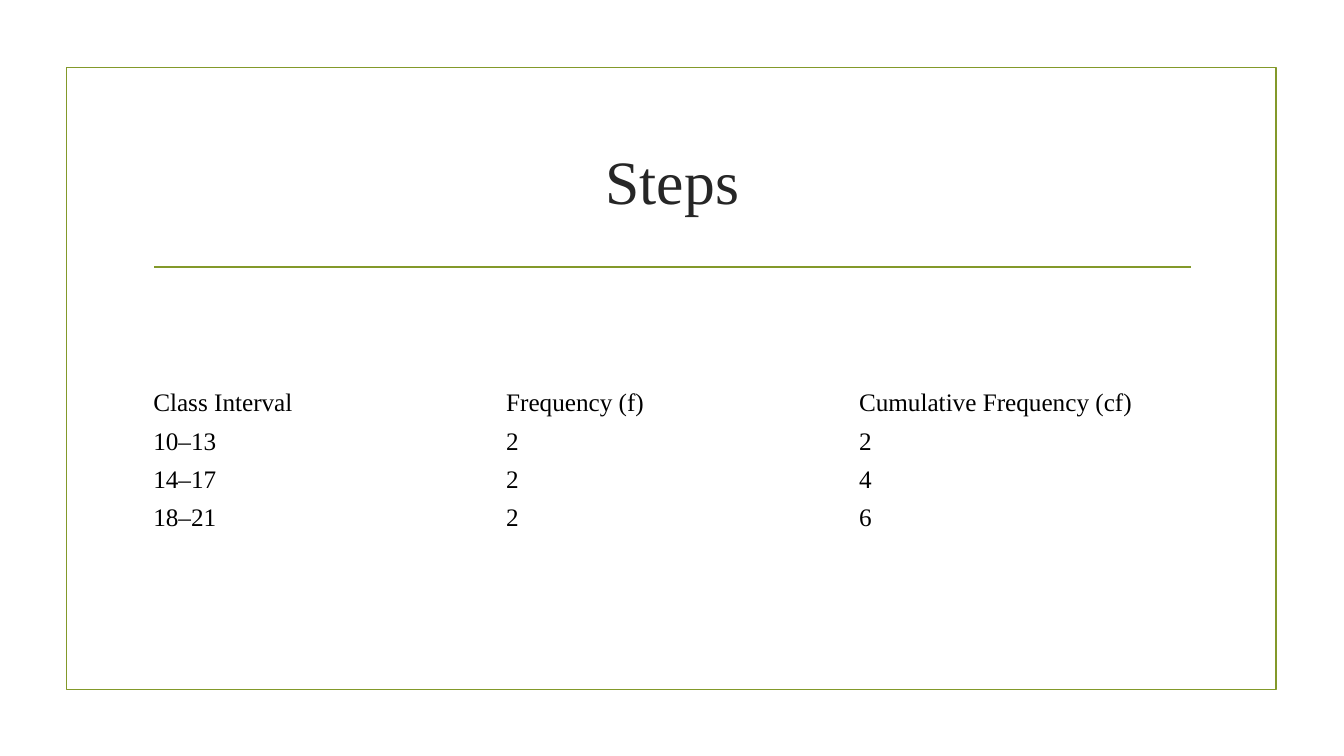
from lxml import etree
from pptx import Presentation
from pptx.dml.color import RGBColor
from pptx.enum.shapes import MSO_CONNECTOR as Connector, MSO_SHAPE as Shape
from pptx.enum.text import MSO_ANCHOR as Anchor, PP_ALIGN as Align
from pptx.oxml.ns import qn
from pptx.util import Inches, Pt

FREQUENCIES = [
    ("Class Interval", "Frequency (f)", "Cumulative Frequency (cf)"),
    ("10–13", "2", "2"),
    ("14–17", "2", "4"),
    ("18–21", "2", "6"),
]


def color(hex_value):
    return RGBColor.from_string(hex_value)


class SlideBuilder:
    FONT = "Times New Roman"
    ACCENT = "83992A"
    TITLE_COLOR = "262626"
    BODY_COLOR = "000000"
    LINE_WIDTH = Pt(1.25)

    def __init__(self, slide):
        self.slide = slide
        self.shapes = slide.shapes

    def background(self, fill):
        self.slide.background.fill.solid()
        self.slide.background.fill.fore_color.rgb = color(fill)

    def outline(self, line):
        line.color.rgb = color(self.ACCENT)
        line.width = self.LINE_WIDTH

    def frame(self, left, top, width, height):
        border = self.shapes.add_shape(
            Shape.RECTANGLE, Inches(left), Inches(top), Inches(width), Inches(height))
        border.shadow.inherit = False
        border.fill.background()
        self.outline(border.line)

    def rule(self, left, right, y):
        """Draw a horizontal divider."""
        divider = self.shapes.add_connector(
            Connector.STRAIGHT, Inches(left), Inches(y), Inches(right), Inches(y))
        self.outline(divider.line)
        etree.SubElement(divider._element.spPr, qn("a:effectLst"))

    def add_text(self, paragraph, text, size, text_color):
        run = paragraph.add_run()
        run.text = text
        run.font.name = self.FONT
        run.font.size = Pt(size)
        run.font.color.rgb = color(text_color)

    def title(self, text, left, top, width, height):
        frame = self.shapes.add_textbox(
            Inches(left), Inches(top), Inches(width), Inches(height)).text_frame
        frame.word_wrap = True
        frame.vertical_anchor = Anchor.MIDDLE
        heading = frame.paragraphs[0]
        heading.alignment = Align.CENTER
        self.add_text(heading, text, 44, self.TITLE_COLOR)

    def table(self, rows, left, top, width, row_height):
        table = self.shapes.add_table(
            len(rows), len(rows[0]), Inches(left), Inches(top),
            Inches(width), Inches(row_height * len(rows))).table
        table.first_row = False
        table.horz_banding = False
        for r, row in enumerate(rows):
            for c, text in enumerate(row):
                cell = table.cell(r, c)
                cell.fill.background()
                cell.vertical_anchor = Anchor.MIDDLE
                cell.margin_top = cell.margin_bottom = Inches(0.04)
                self.add_text(cell.text_frame.paragraphs[0], text, 18, self.BODY_COLOR)


def main():
    deck = Presentation()
    deck.slide_width = Inches(13.33)
    deck.slide_height = Inches(7.5)
    steps = SlideBuilder(deck.slides.add_slide(deck.slide_layouts[6]))
    steps.background("FFFFFF")
    steps.frame(0.66, 0.67, 12, 6.17)
    steps.rule(1.53, 11.81, 2.65)
    steps.title("Steps", 1.42, 1.07, 10.5, 1.43)
    steps.table(FREQUENCIES, 1.42, 3.81, 10.5, 0.38)
    deck.save("out.pptx")


if __name__ == "__main__":
    main()
